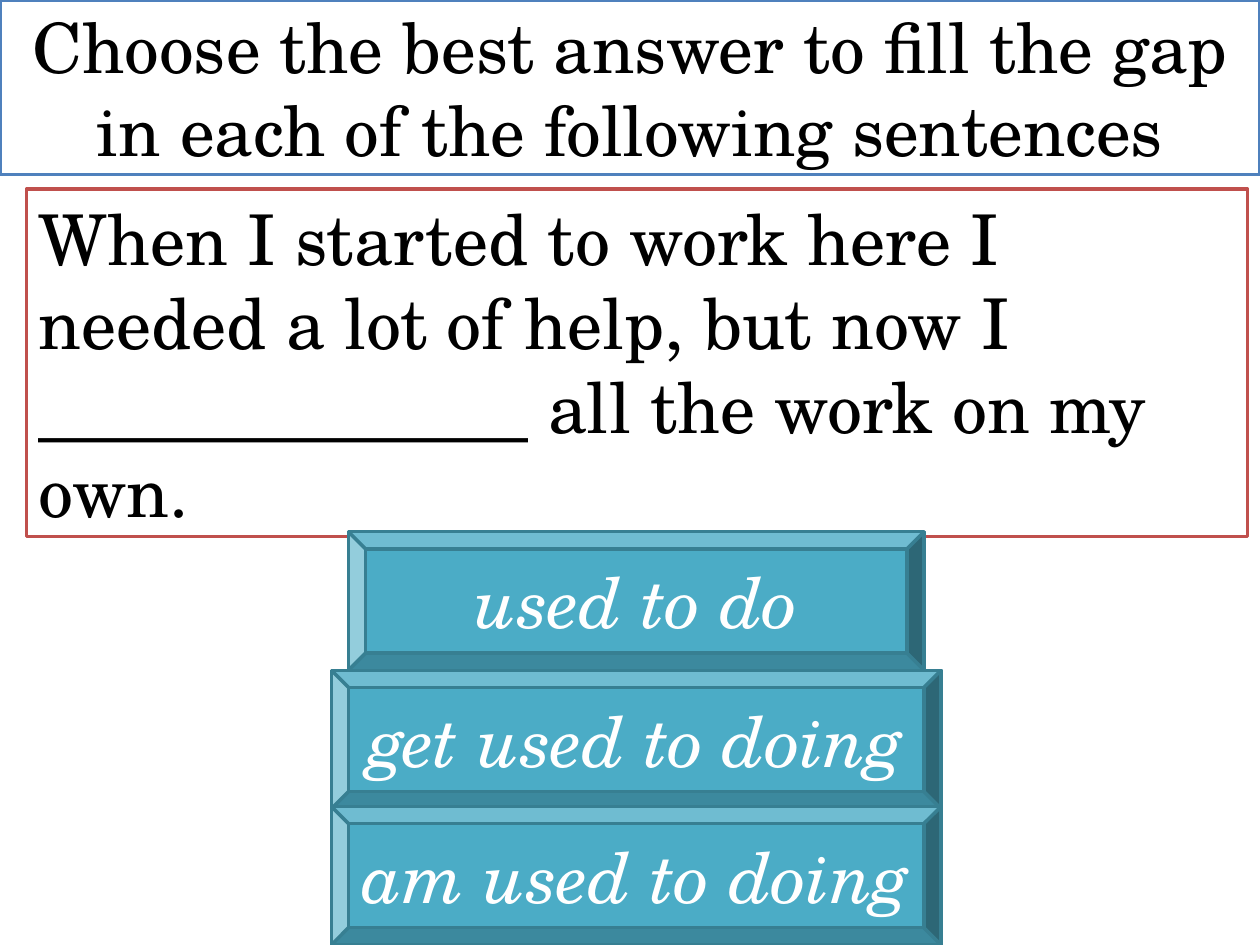
from dataclasses import dataclass

from pptx import Presentation
from pptx import util as u
from pptx.dml import color
from pptx.enum import shapes, text


@dataclass(frozen=True)
class Theme:
    font: str = "TeX Gyre Schola"
    paper: str = "FFFFFF"
    ink: str = "000000"
    heading_line: str = "4F81BD"
    sentence_line: str = "C0504D"
    answer_fill: str = "4BACC6"
    answer_line: str = "377F92"
    heading_size: float = 39.6
    text_size: float = 40
    line_width: float = 2


theme = Theme()
prs = Presentation()
prs.slide_width, prs.slide_height = u.Inches(10), u.Inches(7.5)
width, height = prs.slide_width, prs.slide_height
slide = prs.slides.add_slide(prs.slide_layouts[6])


def add_panel(kind, left, top, wide, high, wording, fill, line, ink, size):
    panel = slide.shapes.add_shape(
        kind, int(left), int(top), int(wide), int(high))
    panel.shadow.inherit = False
    panel.fill.solid()
    panel.fill.fore_color.rgb = color.RGBColor.from_string(fill)
    panel.line.color.rgb = color.RGBColor.from_string(line)
    panel.line.width = u.Pt(theme.line_width)
    frame = panel.text_frame
    frame.word_wrap = True
    frame.vertical_anchor = text.MSO_ANCHOR.MIDDLE
    frame.text = wording
    paragraph = frame.paragraphs[0]
    paragraph.alignment = text.PP_ALIGN.CENTER
    paragraph.font.name = theme.font
    paragraph.font.size = u.Pt(size)
    paragraph.font.color.rgb = color.RGBColor.from_string(ink)
    return frame


add_panel(shapes.MSO_SHAPE.RECTANGLE, 0, 0, width, height * 0.185,
          "Choose the best answer to fill the gap in each of the following sentences",
          theme.paper, theme.heading_line, theme.ink, theme.heading_size)

sentence = add_panel(
    shapes.MSO_SHAPE.RECTANGLE,
    width * 0.021, height * 0.2, width * 0.969, height * 0.368,
    "When I started to work here I needed a lot of help, but now I ______________ all the work on my own.",
    theme.paper, theme.sentence_line, theme.ink, theme.text_size)
sentence.vertical_anchor = text.MSO_ANCHOR.TOP
sentence.paragraphs[0].alignment = text.PP_ALIGN.LEFT

answer_centre = width * 0.505
answer_height = u.Inches(1.1)
answers = [
    ("used to do", 4.22, 4.57),
    ("get used to doing", 5.32, 4.84),
    ("am used to doing", 6.4, 4.84),
]
for wording, top, wide in answers:
    answer_width = u.Inches(wide)
    answer = add_panel(
        shapes.MSO_SHAPE.BEVEL, answer_centre - answer_width / 2,
        u.Inches(top), answer_width, answer_height, wording,
        theme.answer_fill, theme.answer_line, theme.paper, theme.text_size)
    answer.word_wrap = False
    answer.paragraphs[0].font.italic = True

prs.save("out.pptx")
